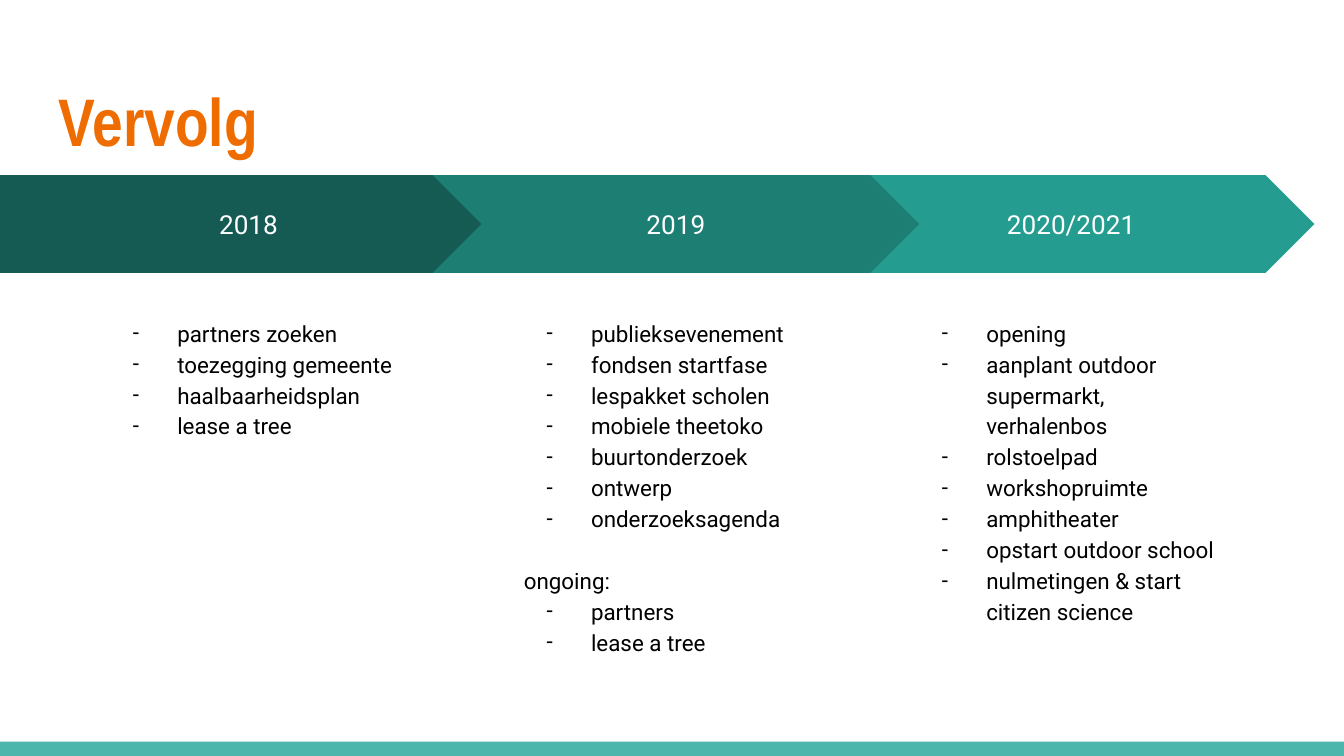
from lxml.etree import SubElement
from pptx import Presentation
from pptx.dml.color import RGBColor
from pptx.enum.shapes import MSO_SHAPE
from pptx.enum.text import MSO_ANCHOR, MSO_AUTO_SIZE, PP_ALIGN
from pptx.oxml.ns import qn
from pptx.util import Cm, Pt

FRAME = {"word_wrap": True, "auto_size": MSO_AUTO_SIZE.NONE,
         "margin_left": Cm(0.25), "margin_right": Cm(0.25),
         "margin_top": Cm(0.25), "margin_bottom": Cm(0.25)}
TITLE_FONT = {"name": "Arial Narrow", "size": Pt(36), "bold": True}
YEAR_FONT = {"name": "Roboto", "size": Pt(14), "bold": False}
LIST_FONT = {"name": "Roboto", "size": Pt(12), "bold": False}
LIST_SPACING = {"alignment": PP_ALIGN.LEFT, "line_spacing": 1.15,
                "space_before": Pt(0), "space_after": Pt(0)}

# Year, arrow (shape, left, width, colour), list left, items; drawn back to front
PERIODS = [
    ("2020/2021", MSO_SHAPE.CHEVRON, 15.65, 9.19, "249C90", 17.12,
     ["opening", "aanplant outdoor supermarkt, verhalenbos", "rolstoelpad",
      "workshopruimte", "amphitheater", "opstart outdoor school",
      "nulmetingen & start citizen science"]),
    ("2018", MSO_SHAPE.PENTAGON, 0, 9.86, "155B54", 1.83,
     ["partners zoeken", "toezegging gemeente", "haalbaarheidsplan",
      "lease a tree"]),
    ("2019", MSO_SHAPE.CHEVRON, 8.18, 9.19, "1D7E74", 9.65,
     ["publieksevenement", "fondsen startfase", "lespakket scholen",
      "mobiele theetoko", "buurtonderzoek", "ontwerp", "onderzoeksagenda",
      "ongoing:", "partners", "lease a tree"]),
]


def colour(value):
    return RGBColor.from_string(value)


def apply(target, values):
    """Set every attribute named in values on target."""
    for name, value in values.items():
        setattr(target, name, value)


deck = Presentation()
deck.slide_width, deck.slide_height = Cm(25.4), Cm(14.29)
page = deck.slides.add_slide(deck.slide_layouts.get_by_name("Comparison"))
title, *lists, spare = page.placeholders
spare.element.getparent().remove(spare.element)

bar = page.shapes.add_shape(MSO_SHAPE.RECTANGLE, 0, Cm(14.02), Cm(25.4), Cm(0.27))
bar.shadow.inherit = False
bar.fill.solid()
bar.fill.fore_color.rgb = colour("4DB6AC")
bar.line.fill.background()

apply(title, {"left": Cm(0.86), "top": Cm(1.25), "width": Cm(23.67), "height": Cm(1.96)})
apply(title.text_frame, {**FRAME, "vertical_anchor": MSO_ANCHOR.TOP})
para = title.text_frame.paragraphs[0]
para.alignment = PP_ALIGN.LEFT
span = para.add_run()
span.text = "Vervolg"
apply(span.font, TITLE_FONT)
span.font.color.rgb = colour("EF6C00")

for box, (year, kind, left, width, fill, list_left, items) in zip(lists, PERIODS):
    arrow = page.shapes.add_shape(kind, Cm(left), Cm(3.31), Cm(width), Cm(1.85))
    arrow.adjustments[0] = 0.5
    arrow.shadow.inherit = False
    arrow.fill.solid()
    arrow.fill.fore_color.rgb = colour(fill)
    arrow.line.fill.background()
    apply(arrow.text_frame, {**FRAME, "vertical_anchor": MSO_ANCHOR.MIDDLE})
    para = arrow.text_frame.paragraphs[0]
    para.alignment = PP_ALIGN.CENTER
    span = para.add_run()
    span.text = year
    apply(span.font, YEAR_FONT)
    span.font.color.rgb = colour("FFFFFF")

    apply(box, {"left": Cm(list_left), "top": Cm(5.72), "width": Cm(6.22), "height": Cm(7.26)})
    apply(box.text_frame, {**FRAME, "vertical_anchor": MSO_ANCHOR.TOP})
    box.text_frame.text = "\n".join(items)
    for para in box.text_frame.paragraphs:
        apply(para, LIST_SPACING)
        span = para.runs[0]
        apply(span.font, LIST_FONT)
        span.font.color.rgb = colour("000000")
        layout = para._p.get_or_add_pPr()
        if span.text.endswith(":"):
            para.space_before = Pt(16.5)
            layout.set("marL", "0")
            layout.set("indent", "0")
            SubElement(layout, qn("a:buNone"))
        else:
            layout.set("marL", str(Cm(1.27)))
            layout.set("indent", str(Cm(-0.84)))
            marker = SubElement(layout, qn("a:buClr"))
            SubElement(marker, qn("a:srgbClr"), val="000000")
            SubElement(layout, qn("a:buFont"), typeface="Roboto")
            SubElement(layout, qn("a:buChar"), char="-")

deck.save("out.pptx")
